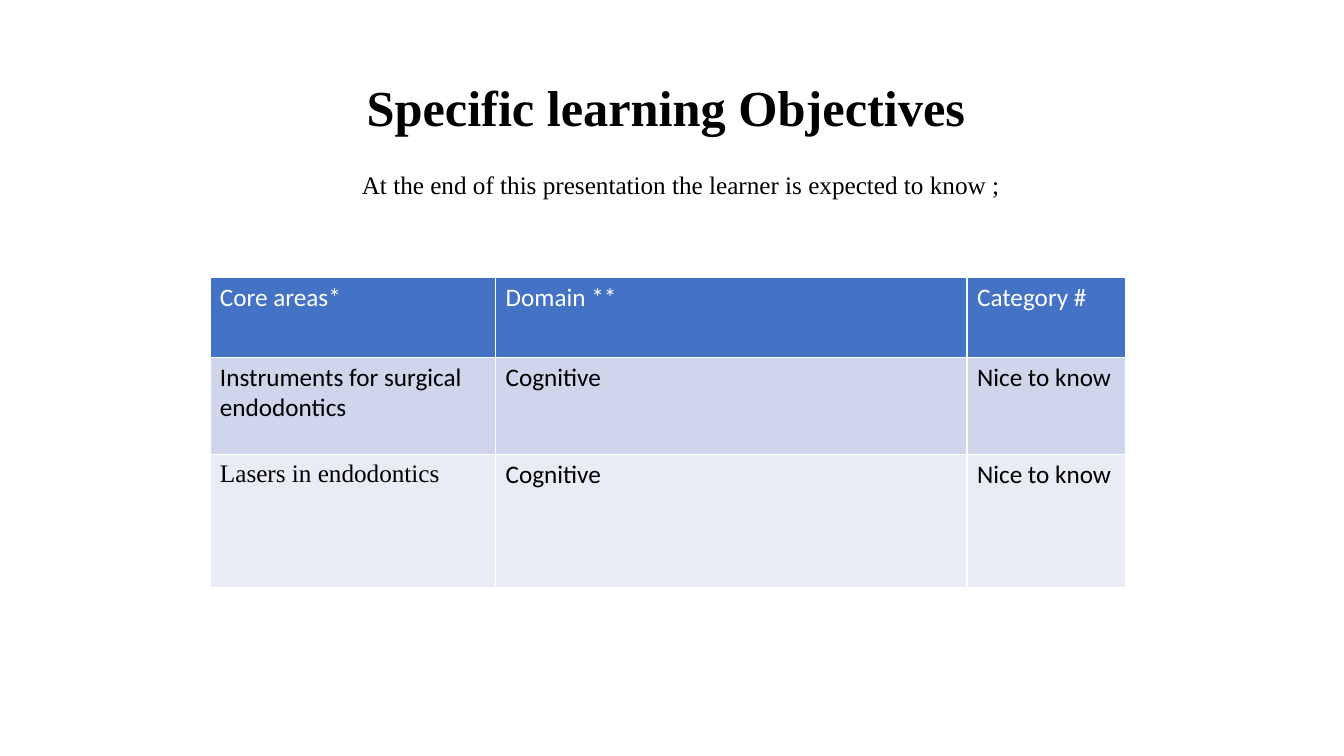
from dataclasses import dataclass

from pptx import Presentation
from pptx import util as u
from pptx.dml.color import RGBColor
from pptx.enum import text


@dataclass(frozen=True)
class Theme:
    """Colours, fonts and type sizes of the slide."""
    ink: str = "000000"
    header_ink: str = "FFFFFF"
    header_fill: str = "4472C4"
    bands: tuple = ("CFD5EA", "E9EBF5")
    serif: str = "Times New Roman"
    sans: str = "Calibri"
    title_size: int = 36
    body_size: int = 18


class ObjectivesSlide:
    """Builds the elements of one slide in a shared style."""

    def __init__(self, deck, theme):
        """Add a title-only page to the deck."""
        self.theme = theme
        self.page = deck.slides.add_slide(deck.slide_layouts[5])

    def style(self, frame, font, size, color, bold=False):
        """Format every run in a text frame."""
        for para in frame.paragraphs:
            for span in para.runs:
                span.font.name = font
                span.font.size = u.Pt(size)
                span.font.bold = bold
                span.font.color.rgb = RGBColor.from_string(color)

    def centre(self, frame, words, size, anchor, bold=False):
        """Fill a frame with one centred serif paragraph."""
        frame.text = words
        frame.word_wrap = True
        frame.auto_size = text.MSO_AUTO_SIZE.NONE
        frame.vertical_anchor = anchor
        para = frame.paragraphs[0]
        para.alignment = text.PP_ALIGN.CENTER
        para.line_spacing = 0.9
        self.style(frame, self.theme.serif, size, self.theme.ink, bold)
        return para

    def title(self, words, left, top, width, height):
        """Place and format the title placeholder."""
        box = self.page.shapes.title
        box.left, box.top, box.width, box.height = map(u.Cm, (left, top, width, height))
        self.centre(box.text_frame, words, self.theme.title_size, text.MSO_ANCHOR.BOTTOM, True)

    def subtitle(self, words, left, top, width, height):
        """Add the introductory line."""
        box = self.page.shapes.add_textbox(*map(u.Cm, (left, top, width, height)))
        para = self.centre(box.text_frame, words, self.theme.body_size, text.MSO_ANCHOR.TOP)
        para.space_before = u.Pt(10)

    def table(self, rows, left, top, widths, heights, serif_cells=()):
        """Add a table with a header row and banded body rows."""
        theme = self.theme
        grid = self.page.shapes.add_table(
            len(heights), len(widths), u.Cm(left), u.Cm(top),
            u.Cm(sum(widths)), u.Cm(sum(heights))).table
        for column, width in zip(grid.columns, widths):
            column.width = u.Cm(width)
        for row, height in zip(grid.rows, heights):
            row.height = u.Cm(height)
        for r, row in enumerate(rows):
            fill = theme.bands[(r - 1) % 2] if r else theme.header_fill
            ink = theme.ink if r else theme.header_ink
            for c, words in enumerate(row):
                cell = grid.cell(r, c)
                cell.text = words
                cell.fill.solid()
                cell.fill.fore_color.rgb = RGBColor.from_string(fill)
                font = theme.serif if (r, c) in serif_cells else theme.sans
                self.style(cell.text_frame, font, theme.body_size, ink)


def main():
    """Build and save the deck."""
    deck = Presentation()
    deck.slide_width, deck.slide_height = u.Cm(33.87), u.Cm(19.05)
    slide = ObjectivesSlide(deck, Theme())
    slide.title("Specific learning Objectives ", 6.15, 1.06, 21.59, 2.54)
    slide.subtitle("At the end of this presentation the learner is expected to know ;",
                   6.15, 4.23, 22.02, 13.12)
    slide.table(
        [("Core areas*", "Domain **", "Category #"),
         ("Instruments for surgical endodontics", "Cognitive", "Nice to know"),
         ("Lasers in endodontics", "Cognitive", "Nice to know")],
        5.29, 6.99, widths=(7.2, 11.88, 3.99), heights=(2.01, 2.46, 3.35),
        serif_cells={(2, 0)})
    deck.save("out.pptx")


if __name__ == "__main__":
    main()
